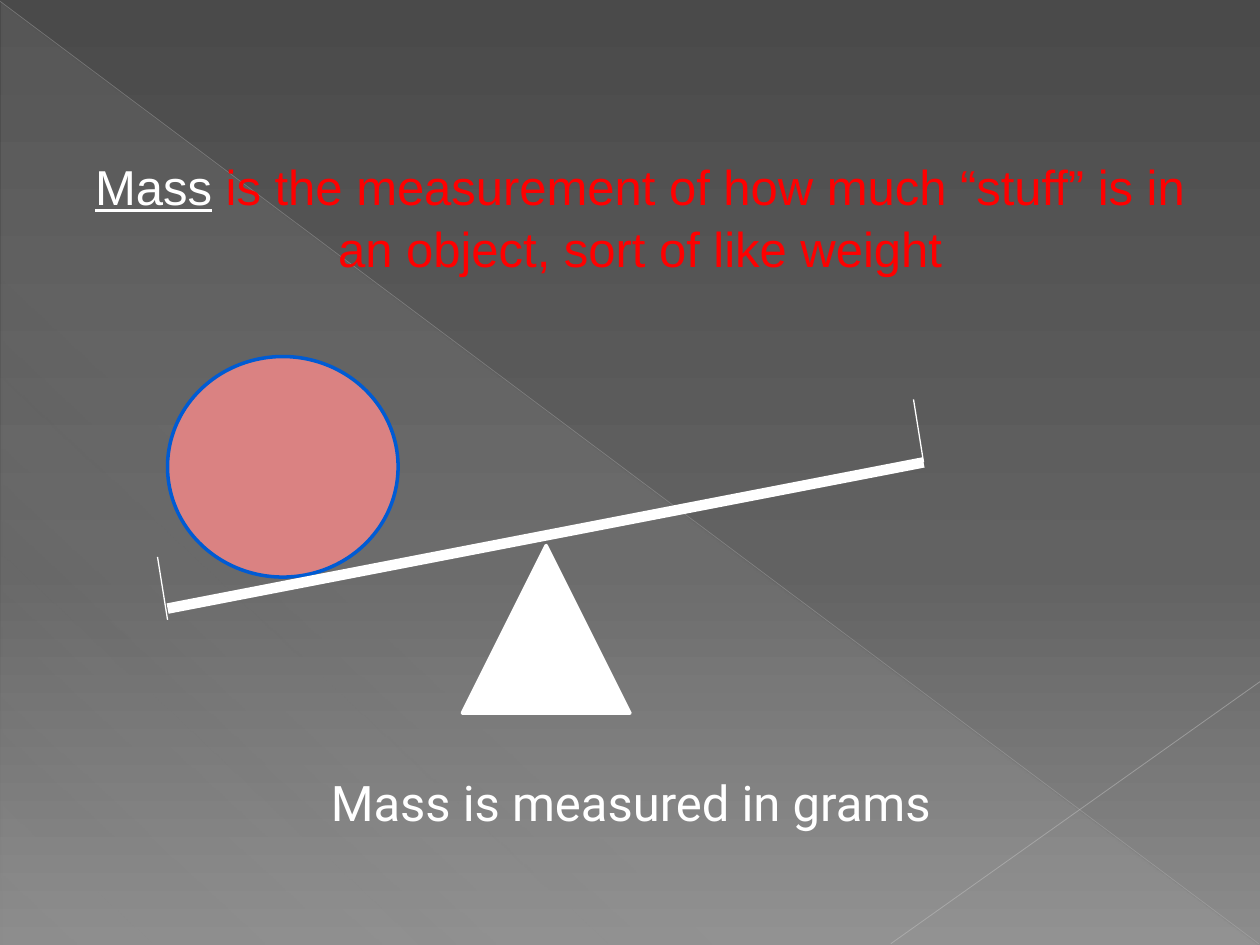
"""Build a slide about mass with a tilted balance beam."""
from typing import NamedTuple

from lxml import etree
from pptx import Presentation
from pptx.dml.color import RGBColor
from pptx.enum.shapes import MSO_CONNECTOR, MSO_SHAPE
from pptx.enum.text import MSO_ANCHOR, PP_ALIGN
from pptx.oxml.ns import qn
from pptx.util import Inches, Pt

STRAIGHT = MSO_CONNECTOR.STRAIGHT
RIGHT_TRIANGLE = MSO_SHAPE.RIGHT_TRIANGLE
TRIANGLE = MSO_SHAPE.ISOSCELES_TRIANGLE
OVAL = MSO_SHAPE.OVAL
CENTER = PP_ALIGN.CENTER
TOP = MSO_ANCHOR.TOP
WHITE = "FFFFFF"
RED = "FF0000"


class Stop(NamedTuple):
    position: int
    color: str
    opacity: int = 100


class Line(NamedTuple):
    start: tuple[float, float]
    end: tuple[float, float]
    color: str
    width: float
    opacity: int = 100


class Body(NamedTuple):
    kind: MSO_SHAPE
    box: tuple[float, float, float, float]
    fill: str
    outline: str


BACKGROUND = [Stop(0, "4A4A4A"), Stop(60, "626262"), Stop(100, "8C8C8C")]
SHEEN = [Stop(0, "D2D2D2", 10), Stop(70, "D2D2D2", 8), Stop(100, "D2D2D2", 1)]
DECORATION = [
    Line((0, 0.01), (9.99, 7.49), "BFBFBF", 0.39, 35),
    Line((10, 5.41), (7.07, 7.49), "C6C6C6", 0.47, 45),
]
BALL = Body(OVAL, (1.33, 2.83, 1.83, 1.75), "DA8282", "005BD3")
FULCRUM = Body(TRIANGLE, (3.67, 4.33, 1.33, 1.33), WHITE, WHITE)
BEAM = Line((1.33, 4.83), (7.33, 3.67), WHITE, 6)
BEAM_ENDS = [
    Line((1.33, 4.92), (1.25, 4.42), WHITE, 0.75),
    Line((7.33, 3.67), (7.25, 3.17), WHITE, 0.75),
]


def rgb(color: str) -> RGBColor:
    """Turn a hex string into a colour."""
    return RGBColor.from_string(color)


def add_opacity(color_element, opacity: int) -> None:
    """Give a colour element an opacity in percent."""
    if opacity < 100:
        etree.SubElement(color_element, qn("a:alpha"), val=str(opacity * 1000))


def set_gradient(fill, owner, stops: list[Stop], angle: int) -> None:
    """Fill with a linear gradient at a clockwise angle."""
    fill.gradient()
    fill.gradient_angle = 360 - angle
    stop_list = next(owner.iter(qn("a:gsLst")))
    for old_stop in list(stop_list):
        stop_list.remove(old_stop)
    for stop in stops:
        element = etree.SubElement(stop_list, qn("a:gs"), pos=str(stop.position * 1000))
        color = etree.SubElement(element, qn("a:srgbClr"), val=stop.color)
        add_opacity(color, stop.opacity)


def add_line(slide, line: Line) -> None:
    """Draw a straight line without a shadow."""
    points = [Inches(value) for value in (*line.start, *line.end)]
    connector = slide.shapes.add_connector(STRAIGHT, *points)
    connector.line.width = Pt(line.width)
    connector.line.color.rgb = rgb(line.color)
    properties = connector.element.spPr
    add_opacity(next(properties.iter(qn("a:srgbClr"))), line.opacity)
    etree.SubElement(properties, qn("a:effectLst"))


def add_body(slide, body: Body) -> None:
    """Draw a filled and outlined shape."""
    shape = slide.shapes.add_shape(body.kind, *map(Inches, body.box))
    shape.shadow.inherit = False
    shape.fill.solid()
    shape.fill.fore_color.rgb = rgb(body.fill)
    shape.line.color.rgb = rgb(body.outline)
    shape.line.width = Pt(2)


def add_sheen(slide) -> None:
    """Draw the translucent triangle over the background."""
    box = map(Inches, (0.01, 0.02, 9.98, 7.48))
    shape = slide.shapes.add_shape(RIGHT_TRIANGLE, *box)
    shape.shadow.inherit = False
    shape.line.fill.background()
    set_gradient(shape.fill, shape.element, SHEEN, 133)


def add_text(slide, box: tuple[float, float, float, float], font_name: str):
    """Add a wrapped text box and return its centred paragraph."""
    frame = slide.shapes.add_textbox(*map(Inches, box)).text_frame
    frame.word_wrap = True
    frame.vertical_anchor = TOP
    paragraph = frame.paragraphs[0]
    paragraph.alignment = CENTER
    paragraph.font.name = font_name
    paragraph.font.size = Pt(28)
    return paragraph


def add_definition(slide) -> None:
    """Write the definition with its underlined term."""
    paragraph = add_text(slide, (0.58, 1.17, 9, 1.33), "Arial")
    paragraph.line_spacing = 1.05
    paragraph.space_before = Pt(1)
    term = paragraph.add_run()
    term.text = "Mass"
    term.font.underline = True
    term.font.color.rgb = rgb(WHITE)
    meaning = paragraph.add_run()
    meaning.text = " is the measurement of how much “stuff” is in an object, sort of like weight"
    meaning.font.color.rgb = rgb(RED)


def add_unit(slide) -> None:
    """Write the unit of mass under the balance."""
    paragraph = add_text(slide, (2.17, 6.08, 5.67, 0.57), "Roboto")
    paragraph.font.color.rgb = rgb(WHITE)
    paragraph.add_run().text = "Mass is measured in grams"


def main() -> None:
    """Build and save the presentation."""
    presentation = Presentation()
    presentation.slide_width = Inches(10)
    presentation.slide_height = Inches(7.5)
    slide = presentation.slides.add_slide(presentation.slide_layouts[6])
    set_gradient(slide.background.fill, slide.element, BACKGROUND, 90)
    add_sheen(slide)
    for line in DECORATION:
        add_line(slide, line)
    add_definition(slide)
    add_body(slide, BALL)
    add_line(slide, BEAM)
    add_body(slide, FULCRUM)
    for line in BEAM_ENDS:
        add_line(slide, line)
    add_unit(slide)
    presentation.save("out.pptx")


if __name__ == "__main__":
    main()
